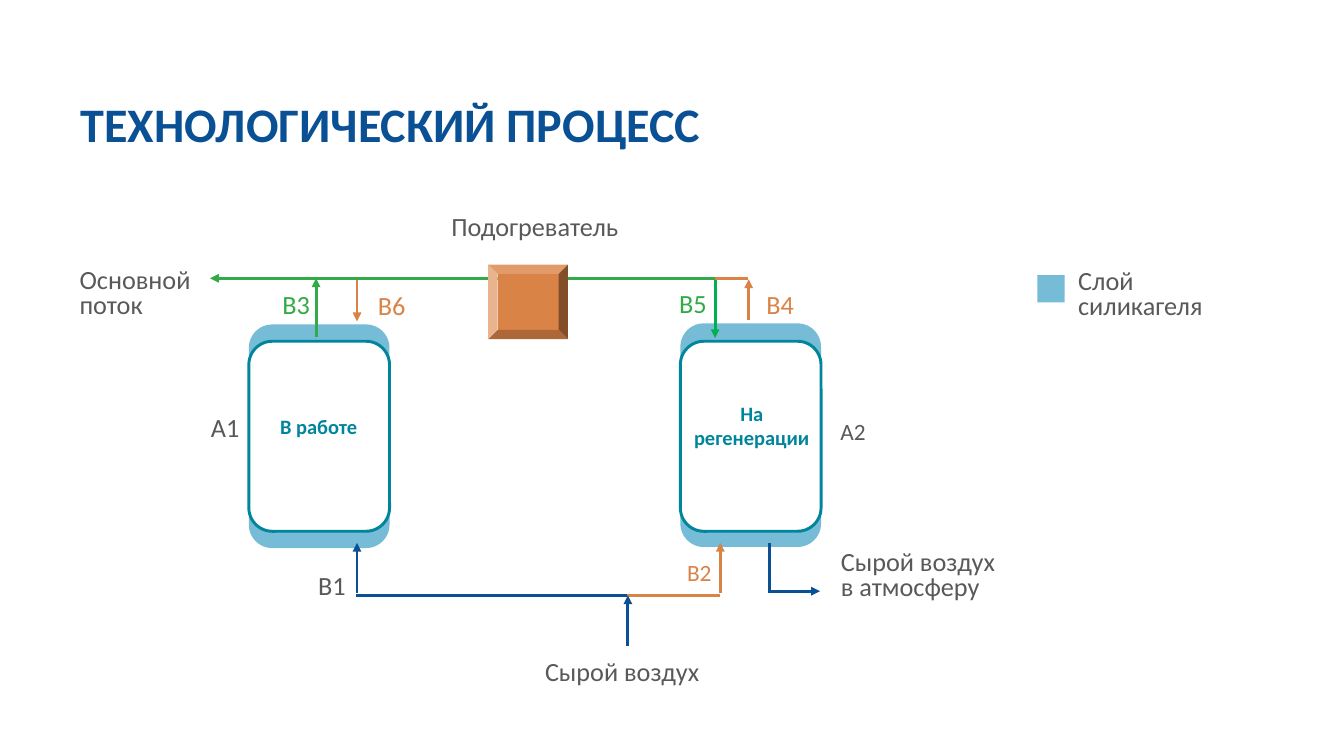
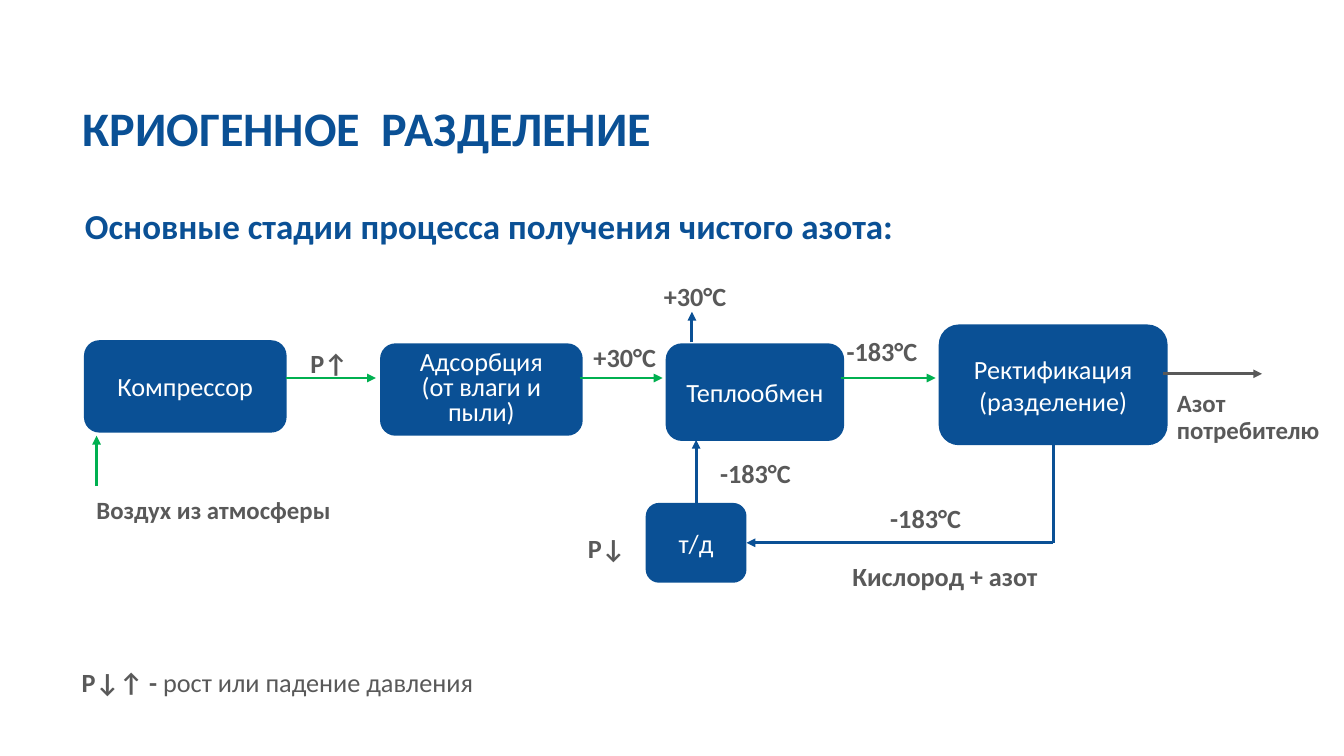
from lxml import etree
from pptx import Presentation
from pptx.dml.color import RGBColor
from pptx.enum.shapes import MSO_CONNECTOR, MSO_SHAPE
from pptx.enum.text import MSO_ANCHOR, MSO_AUTO_SIZE, PP_ALIGN
from pptx.oxml.ns import qn
from pptx.util import Pt

EMU_PER_PX = 9144
FONT = "Calibri"
BLUE = "0A5095"
SKY = "76BCD6"
TEAL = "00859B"
ORANGE = "DA8347"
GREEN = "31AA47"
BRIGHT_GREEN = "00B050"
GREY = "595959"
WHITE = "FFFFFF"
LEFT, CENTER = PP_ALIGN.LEFT, PP_ALIGN.CENTER
MIDDLE = MSO_ANCHOR.MIDDLE
GROW = MSO_AUTO_SIZE.SHAPE_TO_FIT_TEXT
STRAIGHT = MSO_CONNECTOR.STRAIGHT
ROUNDED, RECTANGLE, BEVEL = MSO_SHAPE.ROUNDED_RECTANGLE, MSO_SHAPE.RECTANGLE, MSO_SHAPE.BEVEL
TOP, RIGHT, BOTTOM = 0, 3, 2


def px(*lengths):
    return [length * EMU_PER_PX for length in lengths]


def rgb(color):
    return RGBColor.from_string(color)


def write(frame, text, color, size, bold, align, leading):
    frame.word_wrap = True
    frame.text = text
    for paragraph in frame.paragraphs:
        paragraph.alignment = align
        if leading:
            paragraph.line_spacing = Pt(leading)
        for run in paragraph.runs:
            run.font.name = FONT
            run.font.size = Pt(size)
            run.font.bold = bold
            run.font.color.rgb = rgb(color)


def label(slide, box, text, color=GREY, size=18, bold=False, align=CENTER, leading=None):
    frame = slide.shapes.add_textbox(*px(*box)).text_frame
    write(frame, text, color, size, bold, align, leading)
    frame.auto_size = GROW
    return frame


def title(slide, box, text):
    label(slide, box, text, BLUE, 33, True, LEFT, 33)


def block(slide, kind, box, fill, outline=None):
    shape = slide.shapes.add_shape(kind, *px(*box))
    shape.shadow.inherit = False
    shape.fill.solid()
    shape.fill.fore_color.rgb = rgb(fill)
    if outline:
        shape.line.color.rgb = rgb(outline)
        shape.line.width = Pt(2)
    else:
        shape.line.fill.background()
    return shape


def stage(slide, box, text, leading=None):
    shape = block(slide, ROUNDED, box, BLUE)
    shape.text_frame.vertical_anchor = MIDDLE
    write(shape.text_frame, text, WHITE, 18, False, CENTER, leading)
    return shape


def pipe(slide, start, end, color):
    connector = slide.shapes.add_connector(STRAIGHT, *px(*start, *end))
    connector.line.color.rgb = rgb(color)
    connector.line.width = Pt(2)
    etree.SubElement(connector.line._get_or_add_ln().getparent(), qn("a:effectLst"))
    return connector


def flow(slide, start, end, color):
    connector = pipe(slide, start, end, color)
    arrowhead = etree.SubElement(connector.line._get_or_add_ln(), qn("a:tailEnd"))
    arrowhead.set("type", "triangle")
    return connector


def build_process(slide):
    title(slide, (67, 94, 661, 57), "ТЕХНОЛОГИЧЕСКИЙ ПРОЦЕСС")

    for left, silica_top in ((237, 309), (648, 308)):
        block(slide, ROUNDED, (left, silica_top, 134, 213), SKY)
        block(slide, ROUNDED, (left, 325, 134, 181), WHITE, TEAL)
    block(slide, RECTANGLE, (988, 262, 26, 26), SKY)

    pipe(slide, (599, 567), (339, 567), BLUE)
    pipe(slide, (686, 567), (597, 567), ORANGE)
    pipe(slide, (733, 565), (733, 517), BLUE)
    for start, end, color in (
        ((340, 565), (340, 517), BLUE),
        ((686, 565), (686, 517), ORANGE),
        ((598, 615), (598, 567), BLUE),
        ((733, 563), (781, 563), BLUE),
        ((301, 321), (301, 265), GREEN),
        ((681, 265), (200, 265), GREEN),
        ((681, 267), (681, 322), BRIGHT_GREEN),
        ((340, 267), (340, 306), ORANGE),
        ((713, 305), (713, 266), ORANGE),
    ):
        flow(slide, start, end, color)
    pipe(slide, (712, 265), (681, 265), ORANGE)
    block(slide, BEVEL, (465, 252, 76, 71), ORANGE)

    label(slide, (218, 389, 171, 34), "В работе", TEAL, 14, True)
    label(slide, (650, 377, 132, 57), "На\nрегенерации", TEAL, 14, True)
    for box, text in (
        ((66, 252, 144, 58), "Основной\nпоток"),
        ((1017, 253, 150, 58), "Слой\nсиликагеля"),
        ((791, 521, 224, 58), "Сырой воздух\nв атмосферу"),
    ):
        label(slide, box, text, align=LEFT, leading=17)
    for box, text in (
        ((173, 387, 83, 40), "А1"),
        ((411, 195, 197, 40), "Подогреватель"),
        ((507, 619, 171, 40), "Сырой воздух"),
    ):
        label(slide, box, text)
    label(slide, (766, 392, 93, 37), "А2", size=16)
    for left, top, text, color, size in (
        (287, 537, "В1", GREY, 18),
        (637, 527, "В2", ORANGE, 16),
        (253, 270, "В3", GREEN, 18),
        (714, 270, "В4", ORANGE, 18),
        (631, 269, "В5", GREEN, 18),
        (344, 271, "В6", ORANGE, 18),
    ):
        label(slide, (left, top, 58, 40), text, color, size)


def build_separation(slide):
    title(slide, (69, 98, 717, 57), "КРИОГЕННОЕ  РАЗДЕЛЕНИЕ")
    label(slide, (71, 184, 945, 56), "Основные стадии процесса получения чистого азота:",
          BLUE, 24, True, LEFT, 33)

    stage(slide, (80, 324, 193, 88), "Компрессор")
    stage(slide, (362, 327, 193, 88), "Адсорбция\n(от влаги и пыли)", 17)
    stage(slide, (634, 327, 170, 93), "Теплообмен")
    rectification = stage(slide, (894, 309, 218, 115), "Ректификация (разделение)")
    expander = stage(slide, (615, 479, 96, 76), "т/д")

    for start, end, color in (
        ((92, 463), (92, 415), BRIGHT_GREEN),
        ((272, 360), (358, 360), BRIGHT_GREEN),
        ((552, 360), (631, 360), BRIGHT_GREEN),
        ((801, 360), (891, 360), BRIGHT_GREEN),
        ((1108, 356), (1202, 356), GREY),
        ((659, 326), (659, 297), BLUE),
    ):
        flow(slide, start, end, color)
    flow(slide, (663, 479), (663, 419), BLUE).begin_connect(expander, TOP)
    pipe(slide, (1003, 424), (1003, 517), BLUE).begin_connect(rectification, BOTTOM)
    flow(slide, (1003, 517), (711, 517), BLUE).end_connect(expander, RIGHT)

    for box, text, align in (
        ((270, 326, 87, 40), "Р↑", CENTER),
        ((554, 320, 82, 40), "+30°С", CENTER),
        ((612, 262, 100, 40), "+30°С", CENTER),
        ((782, 314, 116, 40), "-183°С", CENTER),
        ((676, 431, 119, 40), "-183°С", LEFT),
        ((838, 473, 103, 40), "-183°С", LEFT),
        ((550, 502, 56, 40), "Р↓", LEFT),
        ((802, 529, 330, 40), "Кислород + азот", LEFT),
    ):
        label(slide, box, text, bold=True, align=align)
    label(slide, (1111, 366, 208, 63), "Азот\nпотребителю", GREY, 17, True, LEFT, 19)
    label(slide, (82, 468, 304, 38), "Воздух из атмосферы", GREY, 17, True, LEFT, 19)

    legend = label(slide, (68, 630, 492, 40), "Р↓↑ - ", bold=True, align=LEFT)
    meaning = legend.paragraphs[0].add_run()
    meaning.text = "рост или падение давления"
    meaning.font.name = FONT
    meaning.font.size = Pt(18)
    meaning.font.color.rgb = rgb(GREY)


def main():
    deck = Presentation()
    deck.slide_width, deck.slide_height = px(1280, 720)
    blank = deck.slide_layouts[6]
    for build in (build_process, build_separation):
        build(deck.slides.add_slide(blank))
    deck.save("out.pptx")


if __name__ == "__main__":
    main()
